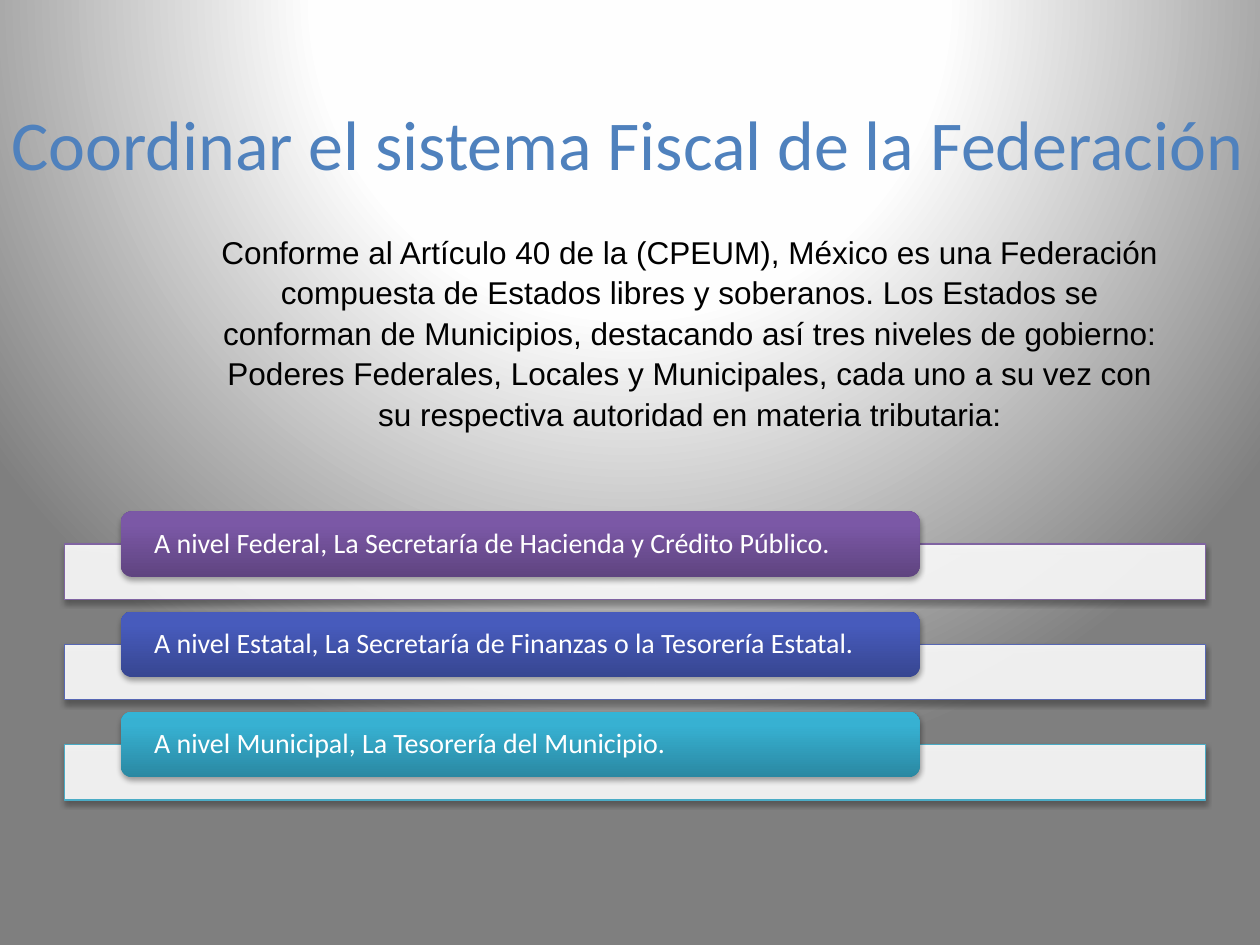
from lxml.etree import SubElement
from pptx import Presentation
from pptx.dml.color import RGBColor
from pptx.enum.shapes import MSO_SHAPE
from pptx.enum.text import MSO_ANCHOR, MSO_AUTO_SIZE, PP_ALIGN
from pptx.oxml import parse_xml
from pptx.oxml.ns import nsdecls, qn
from pptx.util import Cm, Pt

WHITE = RGBColor(0xFF, 0xFF, 0xFF)
PALE = RGBColor(0xFE, 0xFE, 0xFE)
GRAY = RGBColor(0x7F, 0x7F, 0x7F)
BLACK = RGBColor(0, 0, 0)
BLUE = RGBColor(0x4F, 0x81, 0xBD)
PURPLE = RGBColor(0x80, 0x64, 0xA2)
INDIGO = RGBColor(0x57, 0x67, 0xB4)
TEAL = RGBColor(0x4B, 0xAC, 0xC6)
PURPLES = RGBColor(0x5F, 0x44, 0x80), RGBColor(0x7B, 0x58, 0xA6), RGBColor(0x7C, 0x57, 0xA8)
INDIGOS = RGBColor(0x37, 0x46, 0x91), RGBColor(0x47, 0x5B, 0xBC), RGBColor(0x45, 0x5A, 0xBF)
TEALS = RGBColor(0x2A, 0x88, 0xA2), RGBColor(0x37, 0xB1, 0xD2), RGBColor(0x34, 0xB4, 0xD6)

SHADOW = (
    f'<a:outerShdw {nsdecls("a")} blurRad="40000" dist="23000" dir="5400000" rotWithShape="0">'
    '<a:srgbClr val="000000"><a:alpha val="35000"/></a:srgbClr></a:outerShdw>'
)
RADIAL = '<a:path path="circle"><a:fillToRect l="50000" t="-80000" r="50000" b="180000"/></a:path>'
UPWARD = '<a:lin ang="16200000" scaled="0"/>'


def blend(fill, root, tones, mid, course):
    fill.gradient()
    stops = "".join(
        f'<a:gs pos="{spot * 1000}"><a:srgbClr val="{tone}"/></a:gs>'
        for spot, tone in zip((0, mid, 100), tones)
    )
    old = root.find(".//" + qn("a:gradFill"))
    new = parse_xml(
        f'<a:gradFill {nsdecls("a")} rotWithShape="1"><a:gsLst>{stops}</a:gsLst>{course}</a:gradFill>'
    )
    old.getparent().replace(old, new)


def write(box, text, font, size, tone):
    para = box.text_frame.paragraphs[0]
    para.text = text
    face = para.runs[0].font
    face.name = font
    face.size = Pt(size)
    face.color.rgb = tone
    return para


deck = Presentation()
deck.slide_width = Cm(25.4)
deck.slide_height = Cm(19.05)
slide = deck.slides.add_slide(deck.slide_layouts[6])
blend(slide.background.fill, slide.element, (WHITE, PALE, GRAY), 40, RADIAL)

title = slide.shapes.add_textbox(Cm(-0.15), Cm(1.9), Cm(25.6), Cm(1.96))
title.text_frame.word_wrap = False
title.text_frame.auto_size = MSO_AUTO_SIZE.SHAPE_TO_FIT_TEXT
para = write(title, "Coordinar el sistema Fiscal de la Federación", "Calibri", 40, BLUE)
para.alignment = PP_ALIGN.CENTER

body = slide.shapes.add_textbox(Cm(4.06), Cm(4.52), Cm(19.69), Cm(4.37))
body.text_frame.word_wrap = True
body.text_frame.auto_size = MSO_AUTO_SIZE.SHAPE_TO_FIT_TEXT
para = write(
    body,
    "Conforme al Artículo 40 de la (CPEUM), México es una Federación compuesta de "
    "Estados libres y soberanos. Los Estados se conforman de Municipios, destacando así "
    "tres niveles de gobierno: Poderes Federales, Locales y Municipales, cada uno a su "
    "vez con su respectiva autoridad en materia tributaria:",
    "Arial", 18, BLACK,
)
para.alignment = PP_ALIGN.CENTER
para.line_spacing = 1.07
para.space_after = Pt(8)

levels = [
    ("A nivel Federal, La Secretaría de Hacienda y Crédito Público.", PURPLE, PURPLES),
    ("A nivel Estatal, La Secretaría de Finanzas o la Tesorería Estatal.", INDIGO, INDIGOS),
    ("A nivel Municipal, La Tesorería del Municipio.", TEAL, TEALS),
]
group = slide.shapes.add_group_shape().shapes
for row, (text, edge, tones) in enumerate(levels):
    top = 10.31 + row * 2.02

    bar = group.add_shape(MSO_SHAPE.RECTANGLE, Cm(1.3), Cm(top + 0.66), Cm(23.01), Cm(1.12))
    bar.fill.solid()
    bar.fill.fore_color.rgb = WHITE
    tint = bar.element.spPr.find(qn("a:solidFill"))[0]
    SubElement(tint, qn("a:alpha")).set("val", "90000")
    bar.line.color.rgb = edge
    bar.line.width = Pt(0.75)

    pill = group.add_shape(MSO_SHAPE.ROUNDED_RECTANGLE, Cm(2.44), Cm(top), Cm(16.1), Cm(1.32))
    blend(pill.fill, pill.element, tones, 80, UPWARD)
    pill.line.fill.background()

    for shape in (bar, pill):
        shape.shadow.inherit = False
        shape.element.spPr.find(qn("a:effectLst")).append(parse_xml(SHADOW))

    label = group.add_textbox(Cm(2.51), Cm(top + 0.07), Cm(15.97), Cm(1.18))
    frame = label.text_frame
    frame.word_wrap = True
    frame.vertical_anchor = MSO_ANCHOR.MIDDLE
    frame.margin_left = frame.margin_right = Cm(0.6)
    frame.margin_top = frame.margin_bottom = 0
    write(label, text, "Calibri", 16, WHITE).line_spacing = 0.9

deck.save("out.pptx")
